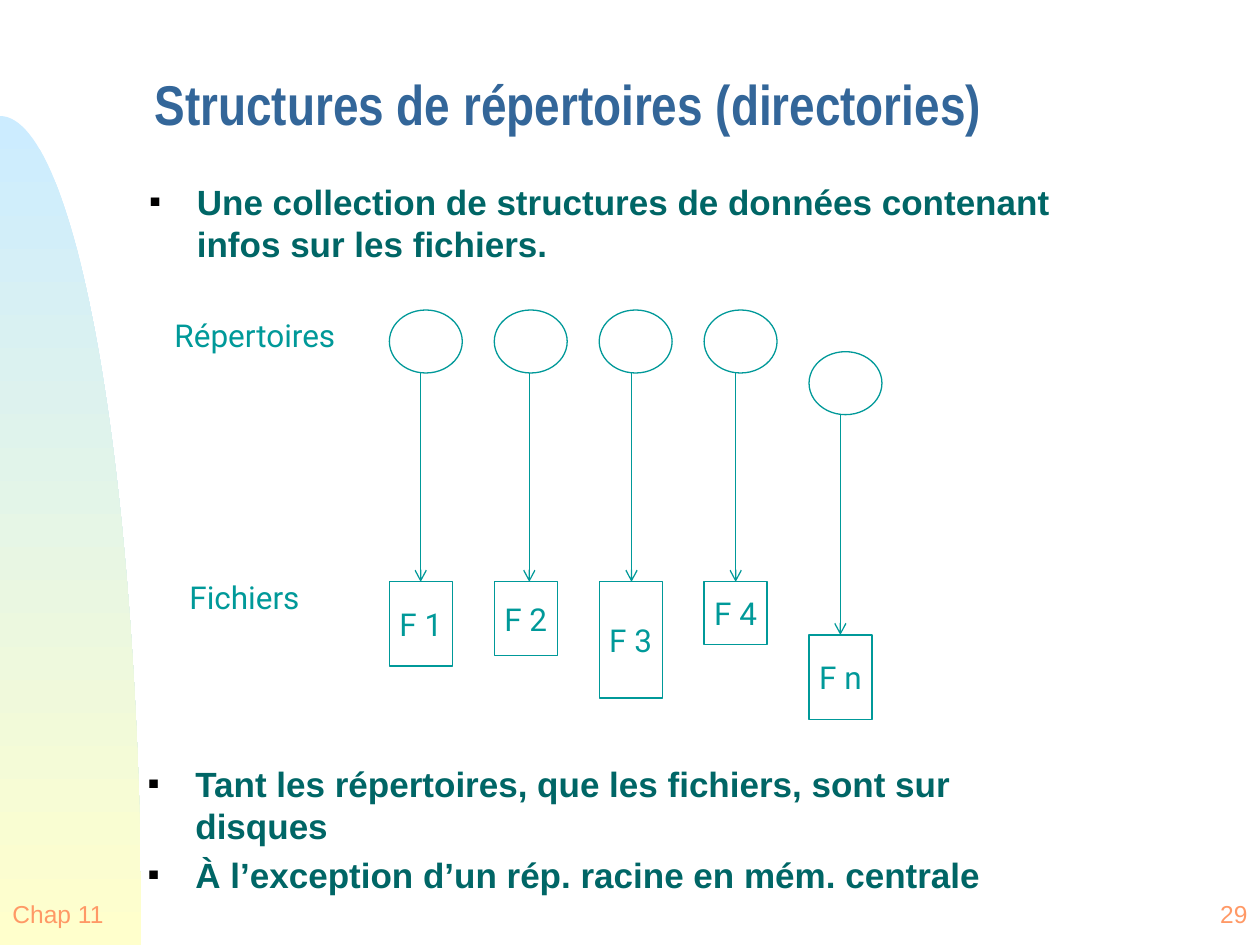
"""Build the slide on directory structures with its diagram of directories and files."""
import math

from lxml import etree
from pptx import Presentation, util as u
from pptx.dml.color import RGBColor
from pptx.enum import shapes, text
from pptx.oxml import ns

TEAL = "009999"
LEFT, CENTER, RIGHT = text.PP_ALIGN.LEFT, text.PP_ALIGN.CENTER, text.PP_ALIGN.RIGHT


def color(value):
    return RGBColor.from_string(value)


def write(shape, lines, font, size, value, align=LEFT, bold=False, before=0,
          wrap=False, spacing=None, bullet=False, anchor=text.MSO_ANCHOR.MIDDLE):
    frame = shape.text_frame
    frame.word_wrap = wrap
    frame.vertical_anchor = anchor
    for index, line in enumerate(lines):
        paragraph = frame.add_paragraph() if index else frame.paragraphs[0]
        paragraph.alignment = align
        paragraph.space_before = u.Pt(before)
        if spacing:
            paragraph.line_spacing = spacing
        if bullet:
            properties = paragraph._p.get_or_add_pPr()
            properties.set("marL", str(u.Cm(0.95)))
            properties.set("indent", str(-u.Cm(0.95)))
            bullet_color = etree.SubElement(properties, ns.qn("a:buClr"))
            etree.SubElement(bullet_color, ns.qn("a:srgbClr"), val="010000")
            etree.SubElement(properties, ns.qn("a:buSzPct"), val="50000")
            etree.SubElement(properties, ns.qn("a:buFont"), typeface="Arial")
            etree.SubElement(properties, ns.qn("a:buChar"), char="■")
        run = paragraph.add_run()
        run.text = line
        run.font.name = font
        run.font.size = u.Pt(size)
        run.font.bold = bold
        run.font.color.rgb = color(value)


presentation = Presentation()
presentation.slide_width, presentation.slide_height = u.Cm(25.4), u.Cm(19.05)
slide = presentation.slides.add_slide(presentation.slide_layouts[6])

curve_width, curve_height, curve_bottom = 2.85, 16.71, 19.05
angles = [math.pi / 2 * step / 60 for step in range(61)]
points = [(u.Cm(curve_width * math.sin(angle)),
           u.Cm(curve_bottom - curve_height * math.cos(angle))) for angle in angles]
builder = slide.shapes.build_freeform(*points[0])
builder.add_line_segments(points[1:] + [(0, u.Cm(curve_bottom))], close=True)
curve = builder.convert_to_shape()
curve.shadow.inherit = False
curve.line.fill.background()
curve.fill.gradient()
curve.fill.gradient_angle = 270
for stop, value in zip(curve.fill.gradient_stops, ("CCECFF", "FFFFCC")):
    stop.color.rgb = color(value)

bullet_style = dict(font="Arial", size=20, value="006666", bold=True, before=4,
                    wrap=True, bullet=True, anchor=text.MSO_ANCHOR.TOP)
footer_style = dict(font="Arial", size=14, value="FF9966")
label_style = dict(font="Roboto", size=18, value=TEAL, align=CENTER)
text_boxes = [
    ((0, 17.78, 2.34, 1.27), ["Chap 11"], dict(footer_style, align=CENTER)),
    ((23.62, 17.78, 1.78, 1.27), ["29"], dict(footer_style, align=RIGHT)),
    ((2.87, 0.91, 21.89, 2.67), ["Structures de répertoires (directories)"],
     dict(font="Arial Narrow", size=32, value="336699", bold=True, wrap=True, spacing=0.7)),
    ((2.77, 3.51, 19.53, 1.07),
     ["Une collection de structures de données contenant infos sur les fichiers."],
     bullet_style),
    ((3.25, 6.25, 3.78, 1.02), ["Répertoires"], label_style),
    ((3.56, 11.53, 2.74, 1.02), ["Fichiers"], label_style),
    ((2.74, 15.24, 19.53, 1.07),
     ["Tant les répertoires, que les fichiers, sont sur disques",
      "À l’exception d’un rép. racine en mém. centrale"], bullet_style),
]
for box, lines, style in text_boxes:
    write(slide.shapes.add_textbox(*map(u.Cm, box)), lines, **style)

files = [
    ("F 1", 6.25, 11.73, 1.7, 8.48),
    ("F 2", 6.25, 11.73, 1.48, 10.67),
    ("F 3", 6.25, 11.73, 2.34, 12.73),
    ("F 4", 6.25, 11.73, 1.27, 14.83),
    ("F n", 7.09, 12.8, 1.7, 16.94),
]
for index, (name, directory_top, file_top, file_height, arrow_x) in enumerate(files):
    left = 7.85 + 2.115 * index
    directory = slide.shapes.add_shape(
        shapes.MSO_SHAPE.OVAL, u.Cm(left), u.Cm(directory_top), u.Cm(1.47), u.Cm(1.27))
    file_box = slide.shapes.add_shape(
        shapes.MSO_SHAPE.RECTANGLE, u.Cm(left), u.Cm(file_top), u.Cm(1.27), u.Cm(file_height))
    write(file_box, [name], **label_style)
    arrow = slide.shapes.add_connector(
        shapes.MSO_CONNECTOR.STRAIGHT, u.Cm(arrow_x), u.Cm(directory_top + 1.27),
        u.Cm(arrow_x), u.Cm(file_top))
    for shape in (directory, file_box):
        shape.shadow.inherit = False
        shape.fill.solid()
        shape.fill.fore_color.rgb = color("FFFFFF")
    for shape in (directory, file_box, arrow):
        shape.line.color.rgb = color(TEAL)
        shape.line.width = u.Pt(0.75)
    etree.SubElement(arrow.line._get_or_add_ln(), ns.qn("a:tailEnd"), type="arrow")
    etree.SubElement(arrow._element.spPr, ns.qn("a:effectLst"))

presentation.save("out.pptx")
